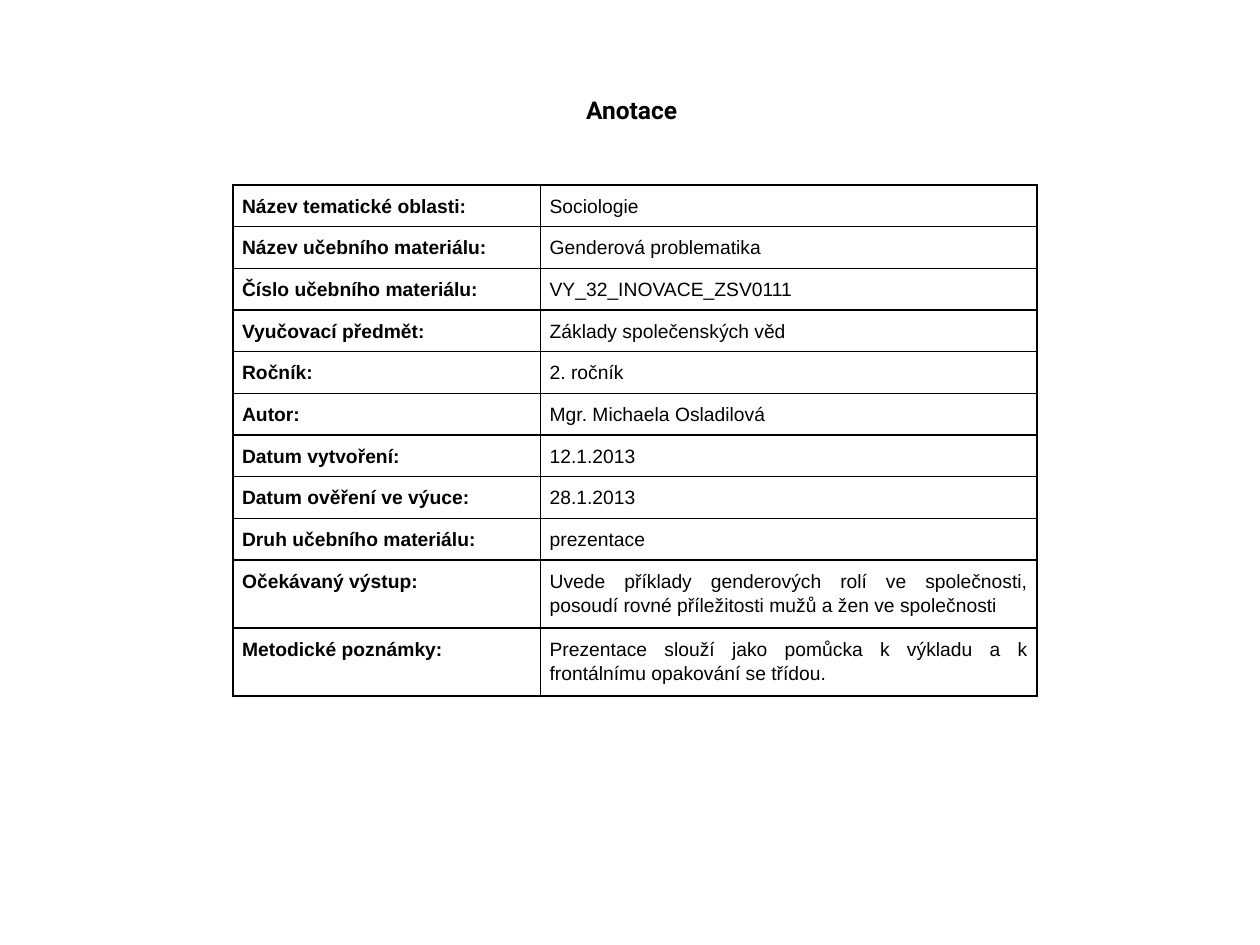
import typing

import pptx
import pptx.dml.color
import pptx.enum.text
import pptx.oxml
import pptx.oxml.ns
import pptx.util

Cm = pptx.util.Cm
Pt = pptx.util.Pt
ALIGN = pptx.enum.text.PP_ALIGN
ANCHOR = pptx.enum.text.MSO_ANCHOR

COLORS = {"ink": "000000"}
TITLE_FONT = {"name": "Roboto", "size": Pt(14), "bold": True}
LABEL_FONT = {"name": "Arial", "size": Pt(11), "bold": True}
VALUE_FONT = {**LABEL_FONT, "bold": False}
CELL_FORMAT = {
    "margin_left": Cm(0.18), "margin_right": Cm(0.18),
    "margin_top": Cm(0.15), "margin_bottom": Cm(0.15),
    "vertical_anchor": ANCHOR.TOP,
}
WIDTHS = (6.2, 10)
LOW, HIGH = 0.84, 1.37


class Entry(typing.NamedTuple):
    label: str
    value: str
    height: float = LOW
    align: ALIGN = ALIGN.LEFT


ENTRIES = (
    Entry("Název tematické oblasti:", "Sociologie"),
    Entry("Název učebního materiálu:", "Genderová problematika"),
    Entry("Číslo učebního materiálu:", "VY_32_INOVACE_ZSV0111"),
    Entry("Vyučovací předmět:", "Základy společenských věd"),
    Entry("Ročník:", "2. ročník"),
    Entry("Autor:", "Mgr. Michaela Osladilová"),
    Entry("Datum vytvoření:", "12.1.2013"),
    Entry("Datum ověření ve výuce:", "28.1.2013"),
    Entry("Druh učebního materiálu:", "prezentace", align=ALIGN.JUSTIFY),
    Entry("Očekávaný výstup:",
          "Uvede příklady genderových rolí ve společnosti, "
          "posoudí rovné příležitosti mužů a žen ve společnosti",
          HIGH, ALIGN.JUSTIFY),
    Entry("Metodické poznámky:",
          "Prezentace slouží jako pomůcka k výkladu a k "
          "frontálnímu opakování se třídou.",
          HIGH, ALIGN.JUSTIFY),
)


def apply(target: typing.Any, values: dict) -> None:
    for name, value in values.items():
        setattr(target, name, value)


def write(frame: typing.Any, text: str, font: dict, align: ALIGN,
          spacing: float = 1.0) -> None:
    para = frame.paragraphs[0]
    apply(para, {"alignment": align, "line_spacing": spacing})
    run = para.add_run()
    run.text = text
    apply(run.font, font)
    run.font.color.rgb = pptx.dml.color.RGBColor.from_string(COLORS["ink"])


def border(cell: typing.Any) -> None:
    """Draw a thin solid line on all four sides of the cell."""
    props = cell._tc.get_or_add_tcPr()
    for side in ("lnL", "lnR", "lnT", "lnB"):
        props.append(pptx.oxml.parse_xml(
            f'<a:{side} {pptx.oxml.ns.nsdecls("a")} w="{Pt(1)}">'
            f'<a:solidFill><a:srgbClr val="{COLORS["ink"]}"/></a:solidFill>'
            f'</a:{side}>'))


def add_title(slide: typing.Any) -> None:
    box = slide.shapes.add_textbox(Cm(4.57), Cm(1.78), Cm(16.33), Cm(0.86))
    apply(box.text_frame, {"word_wrap": True, "vertical_anchor": ANCHOR.MIDDLE})
    write(box.text_frame, "Anotace", TITLE_FONT, ALIGN.CENTER)


def add_grid(slide: typing.Any) -> None:
    total = sum(entry.height for entry in ENTRIES)
    table = slide.shapes.add_table(
        len(ENTRIES), len(WIDTHS),
        Cm(4.7), Cm(3.73), Cm(sum(WIDTHS)), Cm(total)).table
    apply(table, {"first_row": False, "horz_banding": False})
    for column, width in zip(table.columns, WIDTHS):
        column.width = Cm(width)
    for row, entry in zip(table.rows, ENTRIES):
        row.height = Cm(entry.height)
        parts = ((entry.label, LABEL_FONT, entry.align),
                 (entry.value, VALUE_FONT, ALIGN.JUSTIFY))
        for cell, (text, font, align) in zip(row.cells, parts):
            apply(cell, CELL_FORMAT)
            border(cell)
            cell.fill.background()
            write(cell.text_frame, text, font, align, 1.15)


def main() -> None:
    deck = pptx.Presentation()
    apply(deck, {"slide_width": Cm(25.4), "slide_height": Cm(19.05)})
    slide = deck.slides.add_slide(deck.slide_layouts[6])
    add_title(slide)
    add_grid(slide)
    deck.save("out.pptx")


if __name__ == "__main__":
    main()
